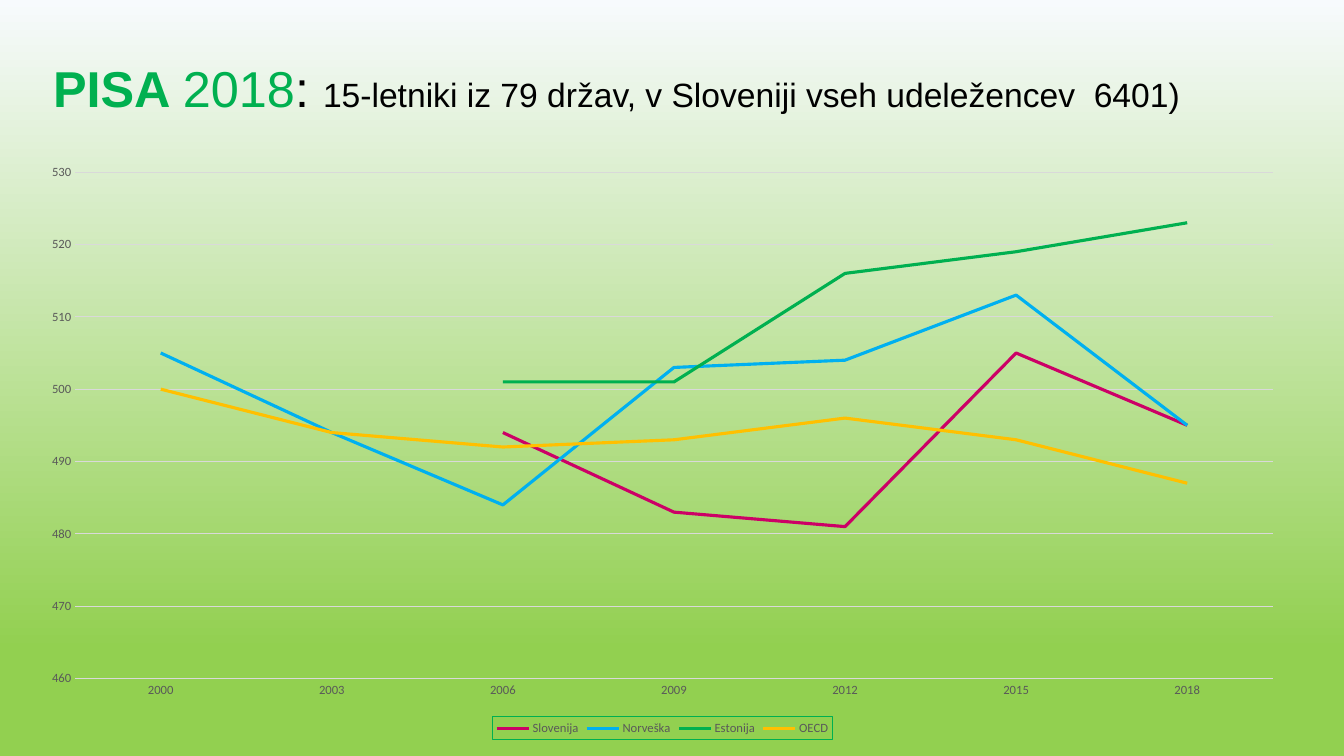
from lxml import etree
from pptx import Presentation
from pptx.chart.data import CategoryChartData
from pptx.dml.color import RGBColor
from pptx.enum.chart import XL_CHART_TYPE, XL_LEGEND_POSITION, XL_TICK_MARK
from pptx.enum.text import MSO_ANCHOR
from pptx.oxml import parse_xml
from pptx.util import Inches, Pt

LINE = XL_CHART_TYPE.LINE
BOTTOM = XL_LEGEND_POSITION.BOTTOM
NO_TICK = XL_TICK_MARK.NONE
MIDDLE = MSO_ANCHOR.MIDDLE

BLACK = RGBColor(0x00, 0x00, 0x00)
GRAY = RGBColor(0x59, 0x59, 0x59)
SILVER = RGBColor(0xD9, 0xD9, 0xD9)
WHITE = RGBColor(0xF7, 0xFA, 0xFD)
LIME = RGBColor(0x92, 0xD0, 0x50)
GREEN = RGBColor(0x00, 0xB0, 0x50)
ROSE = RGBColor(0xCC, 0x00, 0x66)
BLUE = RGBColor(0x00, 0xB0, 0xF0)
GOLD = RGBColor(0xFF, 0xC0, 0x00)

CHART_NS = "http://schemas.openxmlformats.org/drawingml/2006/chart"
DRAW_NS = "http://schemas.openxmlformats.org/drawingml/2006/main"

YEARS = ["2000", "2003", "2006", "2009", "2012", "2015", "2018"]
SCORES = [
    ("Slovenija", ROSE, [None, None, 494, 483, 481, 505, 495]),
    ("Norveška", BLUE, [505, 494, 484, 503, 504, 513, 495]),
    ("Estonija", GREEN, [None, None, 501, 501, 516, 519, 523]),
    ("OECD", GOLD, [500, 494, 492, 493, 496, 493, 487]),
]
TITLE = [
    ("PISA ", 36, GREEN, True),
    ("2018", 36, GREEN, False),
    (": ", 36, BLACK, False),
    ("15-letniki iz 79 držav, v Sloveniji vseh udeležencev  6401)", 24, BLACK, False),
]


class Deck:
    """Holds the style and the current slide, placing items by shares of its size."""

    def __init__(self):
        self.prs = Presentation()
        self.prs.slide_width, self.prs.slide_height = Inches(13.33), Inches(7.5)
        self.slide = self.prs.slides.add_slide(self.prs.slide_layouts[5])

    def place(self, left, top, width, height):
        wide, high = self.prs.slide_width, self.prs.slide_height
        return int(left * wide), int(top * high), int(width * wide), int(height * high)

    def fade(self, stops):
        fill = self.slide.background.fill
        fill.gradient()
        fill.gradient_angle = 270
        for stop, (share, color) in zip(fill.gradient_stops, stops):
            stop.position = share
            stop.color.rgb = color

    def title(self, box, parts):
        shape = self.slide.shapes.title
        shape.left, shape.top, shape.width, shape.height = self.place(*box)
        frame = shape.text_frame
        frame.word_wrap = True
        frame.vertical_anchor = MIDDLE
        para = frame.paragraphs[0]
        para.alignment = 1
        para.line_spacing = 0.9
        para.font.name = "Arial"
        for text, size, color, bold in parts:
            run = para.add_run()
            run.text = text
            run.font.size = Pt(size)
            run.font.color.rgb = color
            run.font.bold = bold

    def style(self, font, size=9, color=GRAY):
        font.name = "Calibri"
        font.size = Pt(size)
        font.color.rgb = color

    def stroke(self, line, color, width=0.75):
        line.color.rgb = color
        line.width = Pt(width)

    def chart(self, box, years, scores):
        data = CategoryChartData()
        data.categories = years
        for name, _, marks in scores:
            data.add_series(name, marks)
        chart = self.slide.shapes.add_chart(LINE, *self.place(*box), data).chart
        self.style(chart.font, 10, BLACK)
        chart.has_title = False
        chart.plots[0].vary_by_categories = False
        for series, (_, color, _) in zip(chart.plots[0].series, scores):
            series.smooth = False
            self.stroke(series.format.line, color, 2.25)
        for axis in (chart.category_axis, chart.value_axis):
            axis.major_tick_mark = axis.minor_tick_mark = NO_TICK
            self.style(axis.tick_labels.font)
        self.stroke(chart.category_axis.format.line, SILVER)
        scale = chart.value_axis
        scale.minimum_scale, scale.maximum_scale, scale.major_unit = 460, 530, 10
        scale.format.line.fill.background()
        self.stroke(scale.major_gridlines.format.line, SILVER)
        self.legend(chart)
        return chart

    def legend(self, chart):
        chart.has_legend = True
        legend = chart.legend
        legend.position = BOTTOM
        legend.include_in_layout = False
        self.style(legend.font)
        text = chart.element.find(f".//{{{CHART_NS}}}legend/{{{CHART_NS}}}txPr")
        text.addprevious(parse_xml(
            f'<c:spPr xmlns:c="{CHART_NS}" xmlns:a="{DRAW_NS}"><a:noFill/>'
            f'<a:ln w="{Pt(0.75)}"><a:solidFill><a:srgbClr val="{GREEN}"/>'
            '</a:solidFill></a:ln></c:spPr>'))

    def fit(self, chart, **shares):
        plot = chart.element.find(f".//{{{CHART_NS}}}plotArea")
        for old in plot.findall(f"{{{CHART_NS}}}layout"):
            plot.remove(old)
        layout = etree.Element(f"{{{CHART_NS}}}layout")
        manual = etree.SubElement(layout, f"{{{CHART_NS}}}manualLayout")
        rules = {"layoutTarget": "inner", "xMode": "edge", "yMode": "edge", **shares}
        for name, value in rules.items():
            etree.SubElement(manual, f"{{{CHART_NS}}}{name}", val=str(value))
        plot.insert(0, layout)


def main():
    deck = Deck()
    deck.fade([(0, WHITE), (0.86, LIME)])
    deck.title((0.032, 0.053, 0.94, 0.135), TITLE)
    chart = deck.chart((0.02, 0.203, 0.946, 0.776), YEARS, SCORES)
    deck.fit(chart, x=0.038, y=0.032, w=0.942, h=0.864)
    deck.prs.save("out.pptx")


if __name__ == "__main__":
    main()
